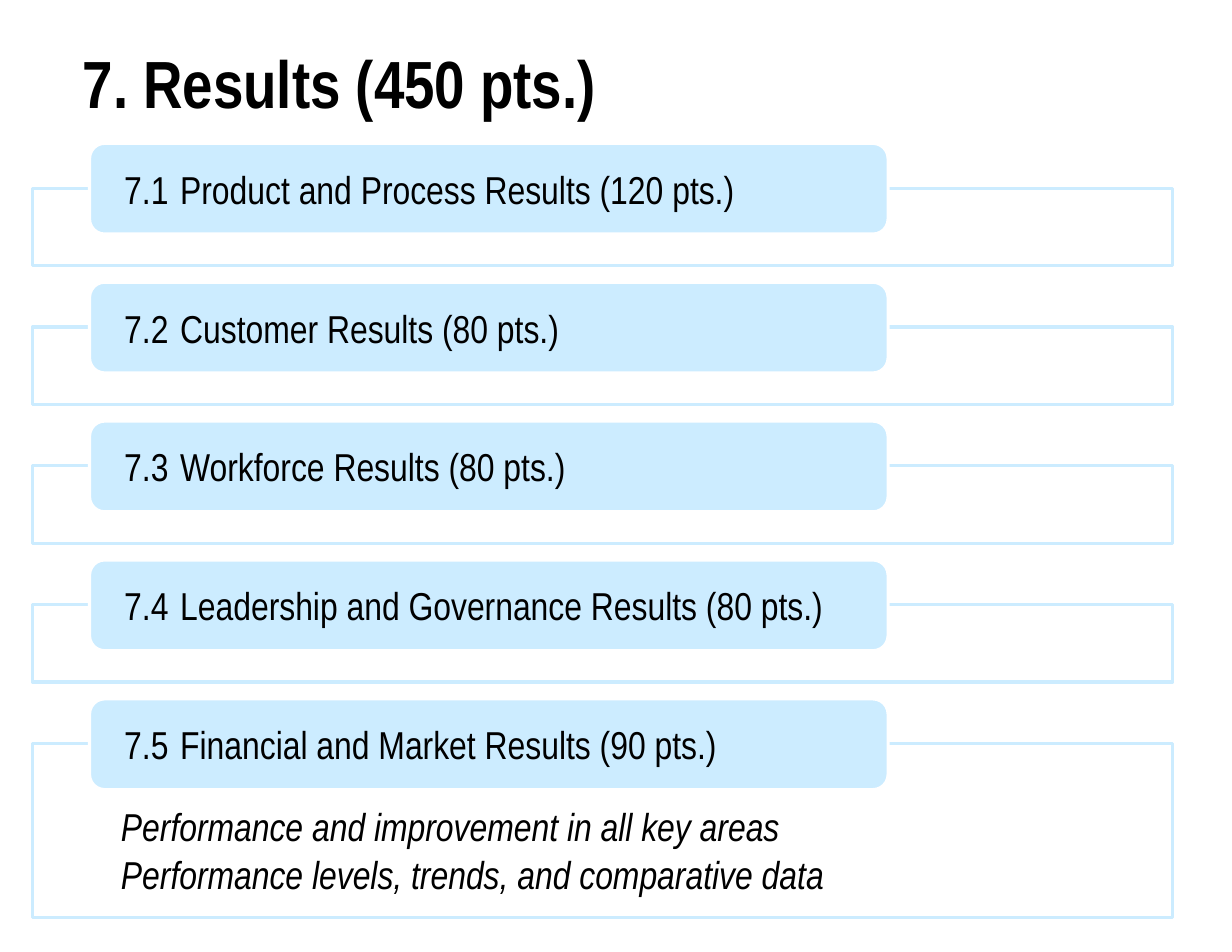
from lxml import etree
from pptx import Presentation
from pptx.dml.color import RGBColor
from pptx.enum.shapes import MSO_SHAPE
from pptx.enum.text import MSO_ANCHOR, PP_ALIGN
from pptx.oxml.ns import qn
from pptx.util import Inches, Pt

RECTANGLE = MSO_SHAPE.RECTANGLE
ROUNDED = MSO_SHAPE.ROUNDED_RECTANGLE
TOP, MIDDLE = MSO_ANCHOR.TOP, MSO_ANCHOR.MIDDLE
LEFT = PP_ALIGN.LEFT

COLORS = {"text": "000000", "accent": "CCECFF", "white": "FFFFFF"}
FONT = "Arial Narrow"

FIRST_ROW, ROW_PITCH = 1.28, 1.24
FRAME_LEFT, FRAME_WIDTH, FRAME_DROP = 0.29, 10.18, 0.4
FRAME_HEIGHT, LAST_FRAME_HEIGHT = 0.69, 1.55
LABEL_LEFT, LABEL_WIDTH, LABEL_HEIGHT = 0.8, 7.13, 0.81
NUMBER_WIDTH = 0.55

RESULTS = [
    "Product and Process Results (120 pts.)",
    "Customer Results (80 pts.)",
    "Workforce Results (80 pts.)",
    "Leadership and Governance Results (80 pts.)",
    "Financial and Market Results (90 pts.)",
]
DETAILS = [
    "Performance and improvement in all key areas",
    "Performance levels, trends, and comparative data",
]


def color(name):
    return RGBColor.from_string(COLORS[name])


def add_panel(page, kind, box, fill, line):
    panel = page.shapes.add_shape(kind, *map(Inches, box))
    panel.shadow.inherit = False
    panel.fill.solid()
    panel.fill.fore_color.rgb = color(fill)
    panel.line.color.rgb = color(line)
    panel.line.width = Pt(2)
    return panel


def set_margins(frame, left, top, right, bottom):
    frame.margin_left, frame.margin_top = Inches(left), Inches(top)
    frame.margin_right, frame.margin_bottom = Inches(right), Inches(bottom)


def write(frame, lines, size, anchor=TOP, bold=False, italic=False):
    frame.word_wrap = True
    frame.vertical_anchor = anchor
    frame.text = "\n".join(lines)
    for para in frame.paragraphs:
        para.alignment = LEFT
        font = para.font
        font.name, font.size = FONT, Pt(size)
        font.bold, font.italic = bold, italic
        font.color.rgb = color("text")


def add_tab_stop(para, position):
    tabs = etree.SubElement(para._p.get_or_add_pPr(), qn("a:tabLst"))
    etree.SubElement(tabs, qn("a:tab"), pos=str(Inches(position)), algn="l")


def add_title(page, text):
    box = page.shapes.add_textbox(*map(Inches, (0.64, 0.32, 8, 0.82)))
    write(box.text_frame, [text], 42.9, bold=True)


def add_frame(page, top, height, lines):
    box = (FRAME_LEFT, top, FRAME_WIDTH, height)
    panel = add_panel(page, RECTANGLE, box, "white", "accent")
    solid = panel.fill._xPr.find(qn("a:solidFill"))
    etree.SubElement(solid[0], qn("a:alpha"), val="90000")
    if lines:
        frame = panel.text_frame
        set_margins(frame, 0.79, 0.57, 0.79, 0.19)
        write(frame, lines, 25, italic=True)
        for para in frame.paragraphs:
            para.line_spacing = 0.9
            para.space_after = Pt(4)


def add_label(page, top, number, name):
    box = (LABEL_LEFT, top, LABEL_WIDTH, LABEL_HEIGHT)
    frame = add_panel(page, ROUNDED, box, "accent", "white").text_frame
    set_margins(frame, 0.27, 0, 0.27, 0)
    frame.text = ""
    para = frame.paragraphs[0]
    para.line_spacing = 0.9
    add_tab_stop(para, NUMBER_WIDTH)
    write(frame, [f"{number}\t{name}"], 25, anchor=MIDDLE)


def main():
    deck = Presentation()
    deck.slide_width, deck.slide_height = Inches(11), Inches(8.5)
    page = deck.slides.add_slide(deck.slide_layouts[6])

    add_title(page, "7. Results (450 pts.)")
    for row, name in enumerate(RESULTS):
        top = FIRST_ROW + row * ROW_PITCH
        is_last = row == len(RESULTS) - 1
        height = LAST_FRAME_HEIGHT if is_last else FRAME_HEIGHT
        add_frame(page, top + FRAME_DROP, height, DETAILS if is_last else [])
        add_label(page, top, f"7.{row + 1}", name)

    deck.save("out.pptx")


if __name__ == "__main__":
    main()
